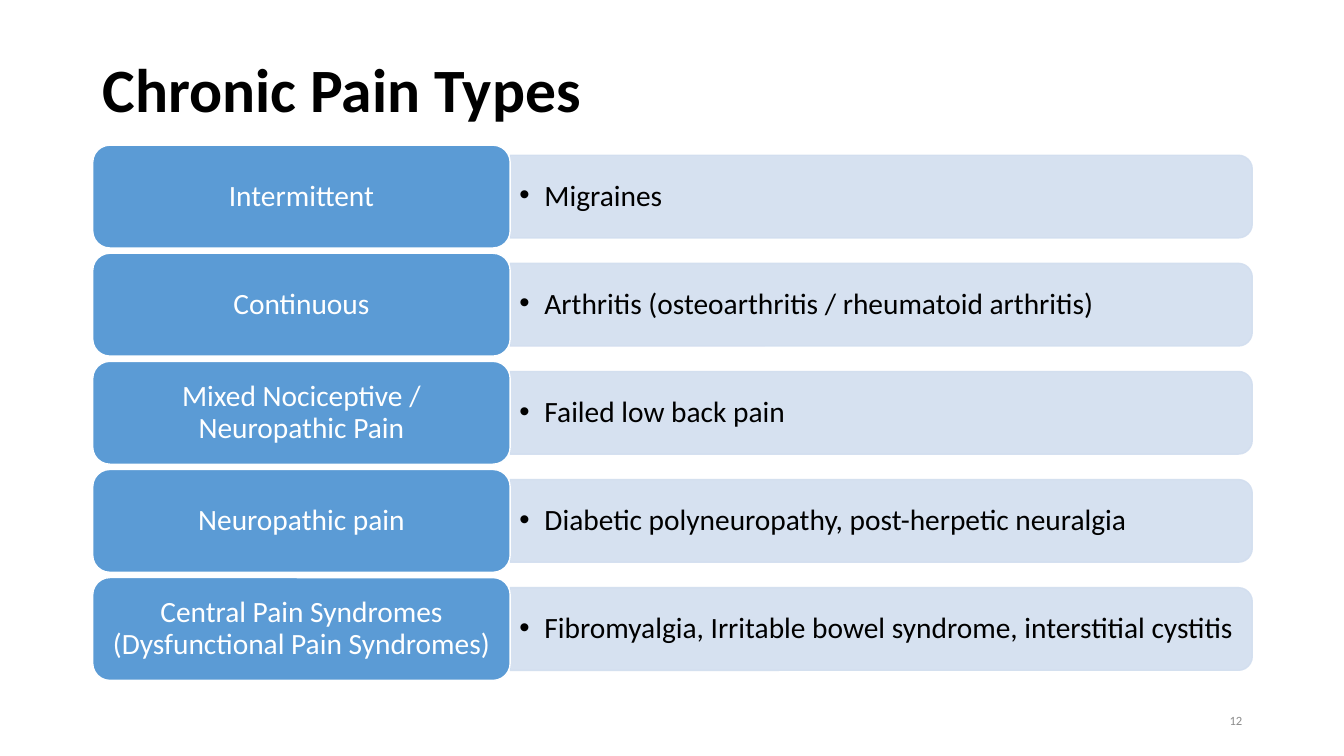
from dataclasses import dataclass

import pptx
import pptx.dml.color
import pptx.enum.shapes
import pptx.enum.text
import pptx.oxml.ns
import pptx.util
from lxml import etree

Inches = pptx.util.Inches
Pt = pptx.util.Pt
RGB = pptx.dml.color.RGBColor.from_string
SHAPE = pptx.enum.shapes.MSO_SHAPE
ALIGN = pptx.enum.text.PP_ALIGN
qn = pptx.oxml.ns.qn


@dataclass(frozen=True)
class Theme:
    font: str = "Calibri"
    black: str = "000000"
    white: str = "FFFFFF"
    label_fill: str = "5B9BD5"
    bar_fill: str = "D2DEEF"
    number_grey: str = "8C8C8C"
    title_size: int = 44
    body_size: int = 21
    number_size: int = 9


THEME = Theme()
PAIN_TYPES = [
    ("Intermittent", "Migraines"),
    ("Continuous", "Arthritis (osteoarthritis / rheumatoid arthritis)"),
    ("Mixed Nociceptive / Neuropathic Pain", "Failed low back pain"),
    ("Neuropathic pain", "Diabetic polyneuropathy, post-herpetic neuralgia"),
    ("Central Pain Syndromes (Dysfunctional Pain Syndromes)",
     "Fibromyalgia, Irritable bowel syndrome, interstitial cystitis"),
]
LEFT, FIRST_TOP, LAST_TOP = 0.92, 1.44, 5.73
LABEL_W, LABEL_H = 4.14, 1.02
BAR_W, BAR_H = 7.36, 0.82
EXAMPLE_W, EXAMPLE_H = 7.32, 0.74
BODY_INSETS = (0.09, 0.04)
BOX_INSETS = (0.1, 0.05)


def write(sp, text, size, color, insets, align=ALIGN.LEFT, bold=False,
          spacing=0.9, bullet=False):
    tf = sp.text_frame
    tf.word_wrap = True
    tf.vertical_anchor = pptx.enum.text.MSO_ANCHOR.MIDDLE
    tf.margin_left = tf.margin_right = Inches(insets[0])
    tf.margin_top = tf.margin_bottom = Inches(insets[1])
    p = tf.paragraphs[0]
    p.alignment = align
    p.line_spacing = spacing
    if bullet:
        add_bullet(p)
    r = p.add_run()
    r.text = text
    r.font.name = THEME.font
    r.font.size = Pt(size)
    r.font.bold = bold
    r.font.color.rgb = RGB(color)


def add_bullet(p):
    pPr = p._p.get_or_add_pPr()
    pPr.set("marL", str(Inches(0.25)))
    pPr.set("indent", str(-Inches(0.25)))
    etree.SubElement(pPr, qn("a:buFont")).set("typeface", "Arial")
    etree.SubElement(pPr, qn("a:buChar")).set("char", "•")


def add_text(s, box, text, size, color, insets, **style):
    sp = s.shapes.add_textbox(*map(Inches, box))
    write(sp, text, size, color, insets, **style)


def add_block(s, kind, box, fill, line):
    sp = s.shapes.add_shape(kind, *map(Inches, box))
    sp.shadow.inherit = False
    sp.fill.solid()
    sp.fill.fore_color.rgb = RGB(fill)
    sp.line.color.rgb = RGB(line)
    sp.line.width = Pt(1)
    return sp


def add_bar(s, left, middle):
    """Bar rounded at its right end: a shape with a rounded top, turned by 90 degrees."""
    box = (left + (BAR_W - BAR_H) / 2, middle - BAR_W / 2, BAR_H, BAR_W)
    sp = add_block(s, SHAPE.ROUND_2_SAME_RECTANGLE, box, THEME.bar_fill, THEME.bar_fill)
    sp.rotation = 90
    for clr in sp._element.spPr.iter(qn("a:srgbClr")):
        etree.SubElement(clr, qn("a:alpha")).set("val", "90000")


def add_pain_type(s, top, label, example):
    middle = top + LABEL_H / 2
    right = LEFT + LABEL_W
    add_bar(s, right, middle)
    add_text(s, (right, middle - EXAMPLE_H / 2, EXAMPLE_W, EXAMPLE_H), example,
             THEME.body_size, THEME.black, BODY_INSETS, bullet=True)
    sp = add_block(s, SHAPE.ROUNDED_RECTANGLE, (LEFT, top, LABEL_W, LABEL_H),
                   THEME.label_fill, THEME.white)
    write(sp, label, THEME.body_size, THEME.white, BODY_INSETS, align=ALIGN.CENTER)


def main():
    prs = pptx.Presentation()
    prs.slide_width, prs.slide_height = Inches(13.33), Inches(7.5)
    s = prs.slides.add_slide(prs.slide_layouts[6])
    add_text(s, (LEFT, 0.4, 11.5, 1.03), "Chronic Pain Types",
             THEME.title_size, THEME.black, BOX_INSETS, bold=True)
    pitch = (LAST_TOP - FIRST_TOP) / (len(PAIN_TYPES) - 1)
    for i, (label, example) in enumerate(PAIN_TYPES):
        add_pain_type(s, FIRST_TOP + i * pitch, label, example)
    add_text(s, (9.42, 6.95, 3, 0.4), "12", THEME.number_size, THEME.number_grey,
             BOX_INSETS, align=ALIGN.RIGHT, spacing=1.0)
    prs.save("out.pptx")


if __name__ == "__main__":
    main()
